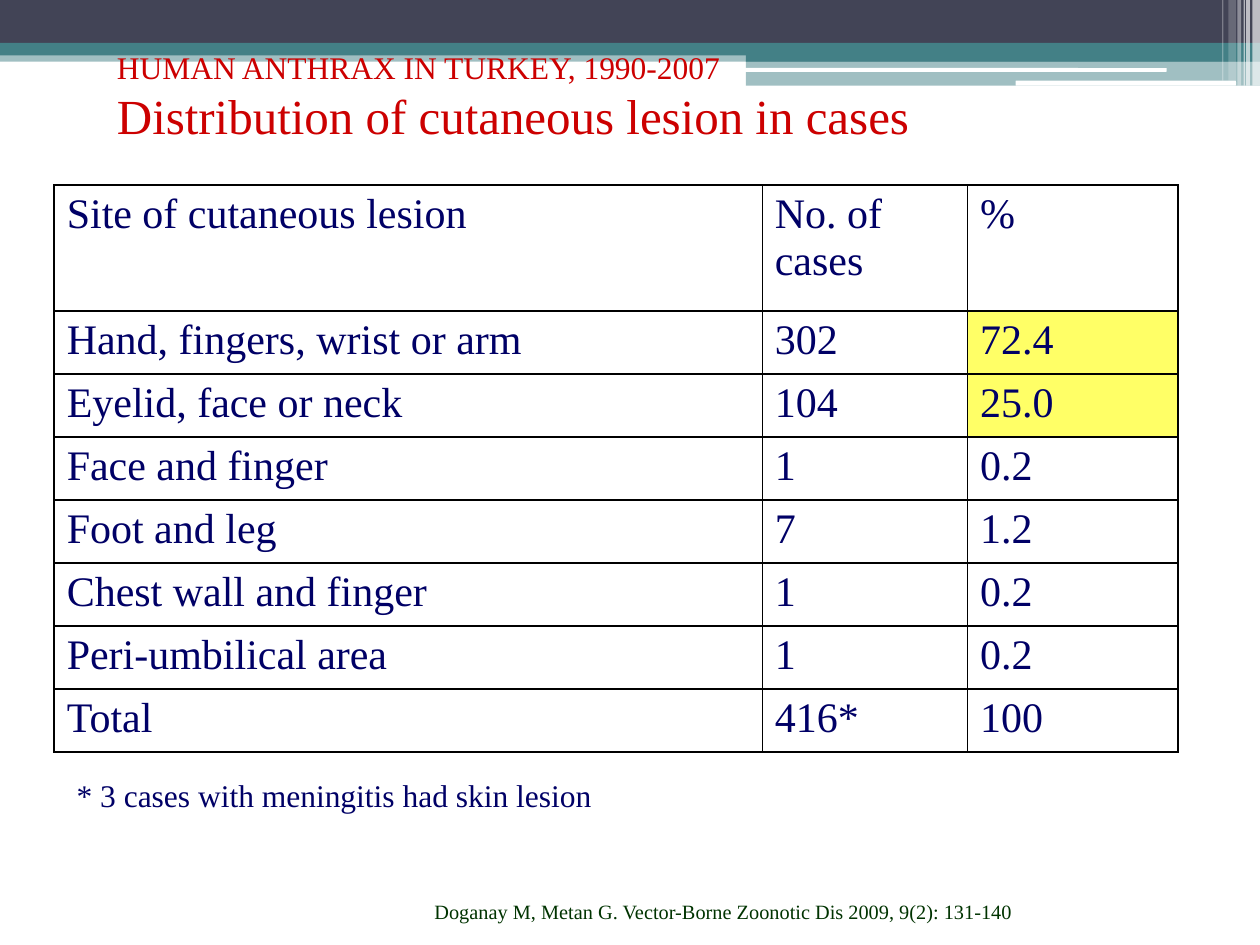
from pptx import Presentation
from pptx.dml.color import RGBColor
from pptx.enum.shapes import MSO_SHAPE
from pptx.oxml.ns import qn
from pptx.util import Inches, Pt
from lxml import etree

RECT = MSO_SHAPE.RECTANGLE
ROUNDED = MSO_SHAPE.ROUNDED_RECTANGLE
NAVY, RED, GREEN = "000066", "CC0000", "003300"
SLATE, TEAL, WHITE, YELLOW, BLACK = "424456", "438086", "FFFFFF", "FFFF66", "000000"

BANDS = [
    (0, 0.4, 10, 0.09, TEAL, 50),
    (0, 0, 10, 0.34, SLATE, 100),
    (0, 0.34, 10, 0.1, TEAL, 100),
    (5.92, 0.39, 4.08, 0.1, TEAL, 100),
    (5.92, 0.48, 4.08, 0.2, TEAL, 50),
]
HIGHLIGHTS = [(5.91, 0.54, 3.35, 0.03), (8.06, 0.64, 1.75, 0.04)]
STRIPES = [
    (9.94, 0.06, 0.68, 65),
    (9.89, 0.03, 0.68, 65),
    (9.87, 0.01, 0.68, 60),
    (9.82, 0.03, 0.68, 40),
    (9.75, 0.06, 0.64, 20),
    (9.7, 0.01, 0.64, 30),
]
LESIONS = [
    ("Site of cutaneous lesion", "No. of cases", "%"),
    ("Hand, fingers, wrist or arm", "302", "72.4"),
    ("Eyelid, face or neck", "104", "25.0"),
    ("Face and finger", "1", "0.2"),
    ("Foot and leg", "7", "1.2"),
    ("Chest wall and finger", "1", "0.2"),
    ("Peri-umbilical area", "1", "0.2"),
    ("Total", "416*", "100"),
]
COLUMN_WIDTHS = [5.62, 1.63, 1.67]
ROW_HEIGHTS = [1] + [0.5] * 7
MAIN_SITES = {"72.4", "25.0"}


def paint(fill, color, alpha=100):
    """Fill with a hex colour at a given opacity in percent."""
    fill.solid()
    fill.fore_color.rgb = RGBColor.from_string(color)
    if alpha < 100:
        for tone in fill._xPr.iter(qn("a:srgbClr")):
            etree.SubElement(tone, qn("a:alpha"), val=str(alpha * 1000))


def write(paragraph, text, size=18, color=NAVY, font="Times New Roman", baseline=0):
    """Add one formatted run to a paragraph."""
    run = paragraph.add_run()
    run.text = text
    run.font.size = Pt(size)
    run.font.name = font
    run.font.color.rgb = RGBColor.from_string(color)
    if baseline:
        run.font._element.set("baseline", str(baseline * 1000))


class LesionSlide:
    """Holds the slide and draws each kind of element on it."""

    def __init__(self, slide, border=BLACK, border_width=1):
        self.slide = slide
        self.border = border
        self.border_width = border_width

    def bar(self, left, top, width, height, color, alpha=100, kind=RECT):
        bar = self.slide.shapes.add_shape(
            kind, Inches(left), Inches(top), Inches(width), Inches(height))
        bar.shadow.inherit = False
        bar.line.fill.background()
        paint(bar.fill, color, alpha)

    def text(self, left, top, width, height, lines):
        box = self.slide.shapes.add_textbox(
            Inches(left), Inches(top), Inches(width), Inches(height))
        frame = box.text_frame
        frame.word_wrap = True
        for index, (line, style) in enumerate(lines):
            paragraph = frame.add_paragraph() if index else frame.paragraphs[0]
            write(paragraph, line, **style)

    def outline(self, cell):
        properties = cell._tc.get_or_add_tcPr()
        for position, side in enumerate(("lnL", "lnR", "lnT", "lnB")):
            edge = etree.Element(qn("a:" + side), w=str(Pt(self.border_width)))
            solid = etree.SubElement(edge, qn("a:solidFill"))
            etree.SubElement(solid, qn("a:srgbClr"), val=self.border)
            properties.insert(position, edge)

    def table(self, left, top, rows, widths, heights):
        table = self.slide.shapes.add_table(
            len(rows), len(widths), Inches(left), Inches(top),
            Inches(sum(widths)), Inches(sum(heights))).table
        for column, width in zip(table.columns, widths):
            column.width = Inches(width)
        for row, height, values in zip(table.rows, heights, rows):
            row.height = Inches(height)
            for cell, value in zip(row.cells, values):
                if value in MAIN_SITES:
                    paint(cell.fill, YELLOW)
                else:
                    cell.fill.background()
                self.outline(cell)
                write(cell.text_frame.paragraphs[0], value, size=24)


def main():
    """Build and save the slide."""
    presentation = Presentation()
    presentation.slide_width = Inches(10)
    presentation.slide_height = Inches(7.5)
    page = LesionSlide(presentation.slides.add_slide(presentation.slide_layouts[6]))

    for band in BANDS:
        page.bar(*band)
    for highlight in HIGHLIGHTS:
        page.bar(*highlight, WHITE, kind=ROUNDED)
    for left, width, height, alpha in STRIPES:
        page.bar(left, 0, width, height, WHITE, alpha)

    page.table(0.43, 1.47, LESIONS, COLUMN_WIDTHS, ROW_HEIGHTS)
    page.text(0.51, 6.11, 6.08, 0.4, [("* 3 cases with meningitis had skin lesion", {})])
    page.text(0.83, 0.33, 7.17, 0.87, [
        ("HUMAN ANTHRAX IN TURKEY, 1990-2007", {"color": RED}),
        ("Distribution of cutaneous lesion in cases", {"size": 28, "color": RED}),
    ])
    page.text(3.35, 6.9, 5.5, 0.32, [
        ("Doganay M, Metan G. Vector-Borne Zoonotic Dis 2009, 9(2): 131-140",
         {"size": 20, "color": GREEN, "baseline": -25}),
    ])
    presentation.save("out.pptx")


if __name__ == "__main__":
    main()
